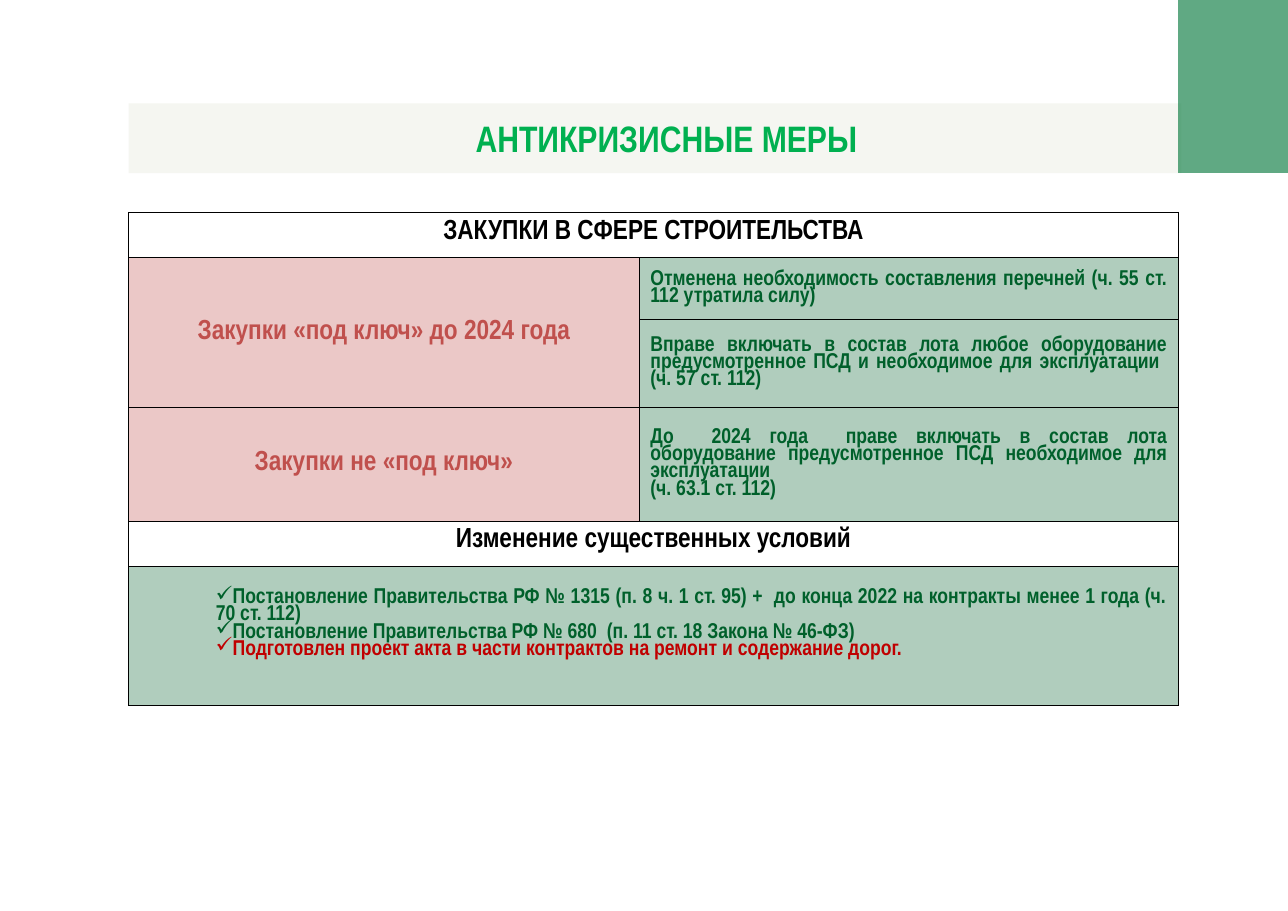
from copy import deepcopy

from lxml import etree
from pptx import Presentation
from pptx.dml.color import RGBColor
from pptx.enum.shapes import MSO_SHAPE
from pptx.enum.text import MSO_ANCHOR, PP_ALIGN
from pptx.oxml.ns import qn
from pptx.util import Pt

RECTANGLE = MSO_SHAPE.RECTANGLE
MIDDLE = MSO_ANCHOR.MIDDLE
CENTER, JUSTIFY = PP_ALIGN.CENTER, PP_ALIGN.JUSTIFY

FONT = "Arial Narrow"
BLACK = RGBColor(0x00, 0x00, 0x00)
BAND_GREY = RGBColor(0xF5, 0xF6, 0xF1)
TITLE_GREEN = RGBColor(0x00, 0xB0, 0x50)
CORNER_GREEN = RGBColor(0x07, 0x7A, 0x3E)
DARK_GREEN = RGBColor(0x00, 0x60, 0x2B)
BRICK = RGBColor(0xC0, 0x50, 0x4D)
RED = RGBColor(0xC0, 0x00, 0x00)


def write(paragraph, text, size=14, color=DARK_GREEN, align=JUSTIFY, spacing=0.85, bullet=None):
    paragraph.text = text
    paragraph.alignment = align
    paragraph.line_spacing = spacing
    for run in paragraph.runs:
        run.font.name = FONT
        run.font.size = Pt(size)
        run.font.bold = True
        run.font.color.rgb = color
    for line_break in paragraph._p.findall(qn("a:br")):
        line_break.append(deepcopy(paragraph.runs[0]._r.rPr))
    if bullet:
        properties = paragraph._p.get_or_add_pPr()
        properties.set("marL", str(Pt(49.7)))
        properties.set("indent", "0")
        etree.SubElement(properties, qn("a:buChar"), char=bullet)


def tint(fill, color, opacity):
    fill.solid()
    fill.fore_color.rgb = color
    color_node = fill._xPr.find(qn("a:solidFill"))[0]
    etree.SubElement(color_node, qn("a:alpha"), val=str(opacity * 1000))


prs = Presentation()
prs.slide_width, prs.slide_height = Pt(841), Pt(594.7)
slide = prs.slides.add_slide(prs.slide_layouts[5])

title = slide.shapes.title
title.left, title.top, title.width, title.height = Pt(120.2), Pt(72), Pt(630), Pt(36)
title.text_frame.vertical_anchor = MIDDLE
write(title.text_frame.paragraphs[0], "АНТИКРИЗИСНЫЕ МЕРЫ",
      size=24, color=TITLE_GREEN, align=CENTER, spacing=1.0)

band = slide.shapes.add_shape(RECTANGLE, Pt(84), Pt(67.5), Pt(687.5), Pt(45.5))
corner = slide.shapes.add_shape(RECTANGLE, Pt(769.2), Pt(-0.5), Pt(71.8), Pt(113.5))
for block, color, opacity in ((band, BAND_GREY, 100), (corner, CORNER_GREEN, 64)):
    block.shadow.inherit = False
    block.line.fill.background()
    tint(block.fill, color, opacity)
title.element.addprevious(band.element)

row_heights = [29.7, 40.5, 57.1, 74.4, 29.7, 90.7]
column_widths = [333.5, 352]
measures = slide.shapes.add_table(
    6, 2, Pt(84), Pt(138.6), Pt(sum(column_widths)), Pt(sum(row_heights))).table
measures.first_row = False
measures.horz_banding = False
for row, height in zip(measures.rows, row_heights):
    row.height = Pt(height)
for column, width in zip(measures.columns, column_widths):
    column.width = Pt(width)

for cell in measures.iter_cells():
    cell_properties = cell._tc.get_or_add_tcPr()
    for side in ("a:lnL", "a:lnR", "a:lnT", "a:lnB"):
        border = etree.SubElement(cell_properties, qn(side), w=str(Pt(0.5)))
        border_fill = etree.SubElement(border, qn("a:solidFill"))
        etree.SubElement(border_fill, qn("a:srgbClr"), val=str(BLACK))
    cell.fill.background()
    cell.vertical_anchor = MIDDLE

for first, last in (((0, 0), (0, 1)), ((1, 0), (2, 0)), ((4, 0), (4, 1)), ((5, 0), (5, 1))):
    measures.cell(*first).merge(measures.cell(*last))

headings = {0: "ЗАКУПКИ В СФЕРЕ СТРОИТЕЛЬСТВА", 4: "Изменение существенных условий"}
for row, text in headings.items():
    heading = measures.cell(row, 0)
    heading.margin_bottom = Pt(7)
    write(heading.text_frame.paragraphs[0], text, size=18, color=BLACK, align=CENTER)

purchases = {1: "Закупки «под ключ» до 2024 года", 3: "Закупки не «под ключ»"}
for row, text in purchases.items():
    purchase = measures.cell(row, 0)
    tint(purchase.fill, BRICK, 31)
    write(purchase.text_frame.paragraphs[0], text, size=18, color=BRICK, align=CENTER)

rules = [
    "Отменена необходимость составления перечней (ч. 55 ст. 112 утратила силу)",
    "Вправе включать в состав лота любое оборудование предусмотренное ПСД "
    "и необходимое для эксплуатации \v(ч. 57 ст. 112)",
    "До  2024 года  праве включать в состав лота оборудование предусмотренное ПСД "
    "необходимое для эксплуатации\v(ч. 63.1 ст. 112)",
]
for row, text in enumerate(rules, start=1):
    rule = measures.cell(row, 1)
    tint(rule.fill, DARK_GREEN, 31)
    write(rule.text_frame.paragraphs[0], text)

changes = [
    ("Постановление Правительства РФ № 1315 (п. 8 ч. 1 ст. 95) +  до конца 2022 "
     "на контракты менее 1 года (ч. 70 ст. 112)", DARK_GREEN),
    ("Постановление Правительства РФ № 680  (п. 11 ст. 18 Закона № 46-ФЗ)", DARK_GREEN),
    ("Подготовлен проект акта в части контрактов на ремонт и содержание дорог.", RED),
]
conditions = measures.cell(5, 0)
conditions.margin_bottom = Pt(19)
tint(conditions.fill, DARK_GREEN, 31)
for index, (text, color) in enumerate(changes):
    frame = conditions.text_frame
    paragraph = frame.add_paragraph() if index else frame.paragraphs[0]
    write(paragraph, text, color=color, bullet="✓")

prs.save("out.pptx")
